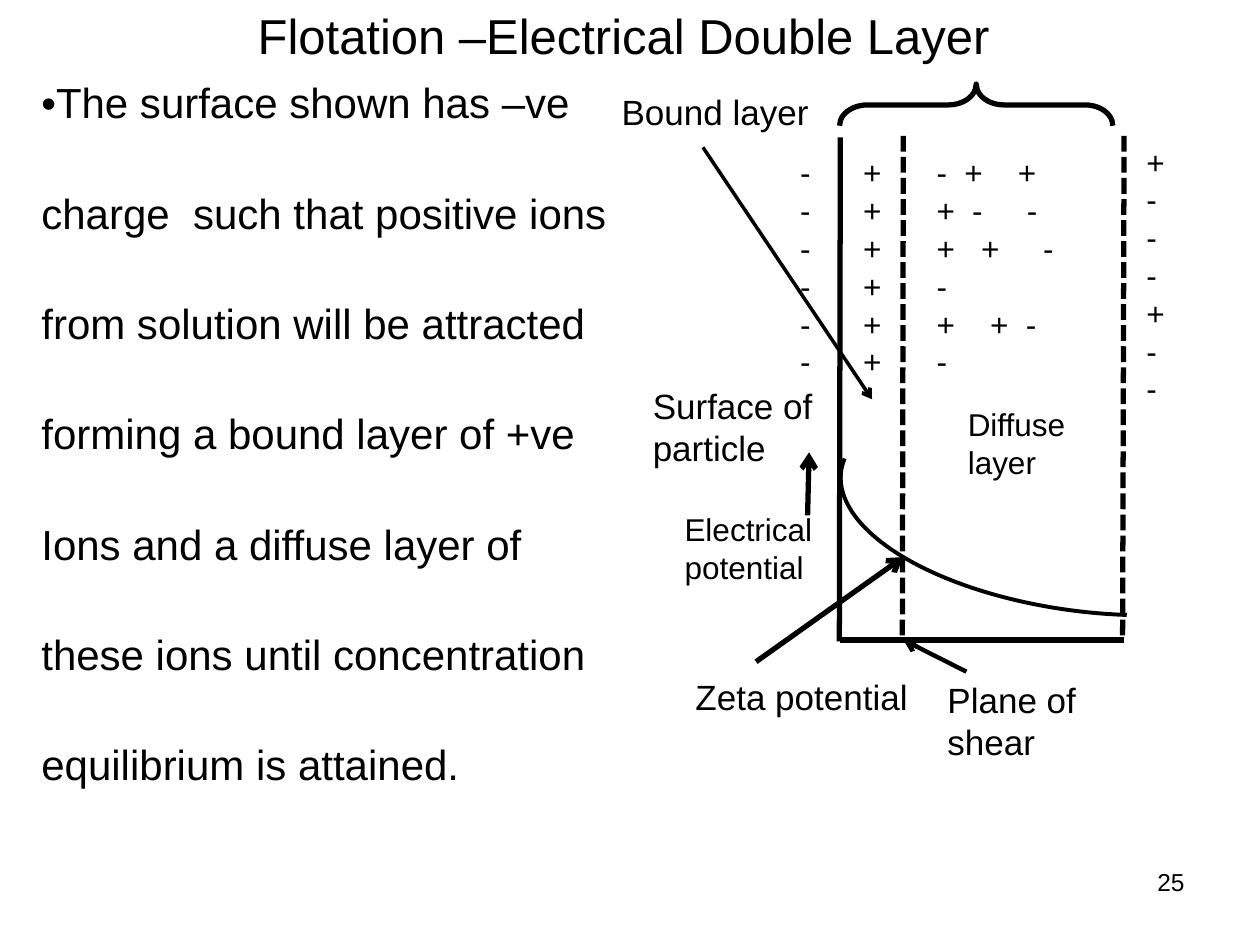
from lxml.etree import SubElement as Sub
from pptx import Presentation
from pptx.dml.color import RGBColor as RGB
from pptx.enum.dml import MSO_LINE as Dash
from pptx.enum.shapes import MSO_CONNECTOR as Link, MSO_SHAPE as Shape
from pptx.enum.text import MSO_ANCHOR as Anchor, PP_ALIGN as Align
from pptx.oxml.ns import qn
from pptx.util import Cm, Pt

HUES = {"ink": "000000"}
INK = RGB.from_string(HUES["ink"])
FONT = {"name": "Arial", "bold": False}

deck = Presentation()
deck.slide_width, deck.slide_height = Cm(25.4), Cm(19.05)
slide = deck.slides.add_slide(deck.slide_layouts[6])
shapes = slide.shapes


def write(frame, lines, size, align=Align.LEFT):
    """Fill a text frame with one paragraph per line and return them."""
    frame.word_wrap = True
    for i, line in enumerate(lines):
        par = frame.add_paragraph() if i else frame.paragraphs[0]
        par.text, par.alignment = line, align
        for key, val in {**FONT, "size": Pt(size)}.items():
            setattr(par.font, key, val)
        par.font.color.rgb = INK
    return frame.paragraphs


def ink(item, width):
    item.line.color.rgb, item.line.width = INK, Pt(width)


# Explanation on the left
table = shapes.add_table(2, 1, Cm(0.43), Cm(1.5), Cm(23.5), Cm(17.17)).table
table.first_row = table.horz_banding = False
for row, high in zip(table.rows, (15.9, 1.27)):
    row.height = Cm(high)
    row.cells[0].fill.background()
pars = write(table.cell(0, 0).text_frame, (
    "The surface shown has –ve", "charge  such that positive ions",
    "from solution will be attracted", "forming a bound layer of +ve",
    "Ions and a diffuse layer of", "these ions until concentration",
    "equilibrium is attained."), 24)
for i, par in enumerate(pars):
    par.space_before = Pt(36.3 if i else 0)
    props = par._p.get_or_add_pPr()
    props.set("marL", "0")
    props.set("indent", str(Cm(0.15)))
    if i == 0:
        Sub(props, qn("a:buFont"), typeface=FONT["name"])
        Sub(props, qn("a:buChar"), char="•")

# Title, labels and columns of charges: left, top, width, height, size, lines
texts = {
    "title": (1.14, 0.35, 22.86, 0.71, 28, ["Flotation –Electrical Double Layer"]),
    "page": (18.21, 17.35, 5.92, 1.32, 14, ["25"]),
    "zeta": (13.77, 13.49, 5.28, 1.12, 20, ["Zeta potential"]),
    "surface": (12.91, 7.62, 4.01, 1.96, 20, ["Surface of particle"]),
    "diffuse": (19.26, 8.05, 2.97, 1.8, 18, ["Diffuse layer"]),
    "bound": (12.28, 1.7, 4.65, 1.12, 20, ["Bound layer"]),
    "electric": (13.55, 10.16, 3.18, 1.8, 18, ["Electrical potential"]),
    "shear": (18.85, 13.55, 3.81, 1.96, 20, ["Plane of shear"]),
    "minus": (15.88, 2.97, 0.84, 4.88, 18, "-" * 6),
    "plus": (17.15, 2.97, 0.84, 4.88, 18, "+" * 6),
    "mixed": (18.63, 2.97, 3.18, 4.88, 18,
              ["-\t+\t+", "+\t-\t-", "+\t+\t-", "-", "+\t+\t-", "-"]),
    "outer": (22.86, 2.75, 1.07, 5.64, 18, "+---+--"),
}
aligns = {"title": Align.CENTER, "page": Align.RIGHT}
boxes = {}
for name, (*place, size, lines) in texts.items():
    frame = boxes[name] = shapes.add_textbox(*map(Cm, place)).text_frame
    write(frame, lines, size, aligns.get(name, Align.LEFT))
boxes["title"].vertical_anchor = Anchor.MIDDLE

# Tab stops that scatter the charges of the diffuse layer
stops = {0: (0.56, 1.64), 1: (0.72, 1.82), 2: (0.9, 2.15), 4: (1.08, 1.8)}
for i, tabs in stops.items():
    props = boxes["mixed"].paragraphs[i]._p.get_or_add_pPr()
    group = Sub(props, qn("a:tabLst"))
    for tab in tabs:
        Sub(group, qn("a:tab"), pos=str(Cm(tab)), algn="l")

# Axes, layer limits and pointers: start, end, width, style
lines = (
    (16.94, 2.77, 16.92, 12.93, 3, ""),
    (16.94, 12.9, 22.66, 12.9, 3, ""),
    (18.21, 2.74, 18.19, 12.9, 3, "dash"),
    (22.66, 2.74, 22.63, 12.9, 3, "dash"),
    (15.24, 13.34, 18.21, 11.23, 3, "arrow"),
    (14.17, 2.97, 17.58, 8.05, 2, "arrow"),
    (16.28, 10.39, 16.31, 9.12, 3, "arrow"),
    (19.48, 13.54, 18.21, 12.9, 2.5, "arrow"),
)
for *ends, width, style in lines:
    line = shapes.add_connector(Link.STRAIGHT, *map(Cm, ends))
    ink(line, width)
    if style == "dash":
        line.line.dash_style = Dash.SQUARE_DOT
    if style == "arrow":
        Sub(line.line._get_or_add_ln(), qn("a:tailEnd"), type="arrow")
    Sub(line._element.spPr, qn("a:effectLst"))

# Potential curve and brace: kind, place, rotation, adjustments, width
curves = (
    (Shape.ARC, (16.92, 7.87, 10.24, 4.47), 186.6, (148.2, 1.9), 2.25),
    (Shape.RIGHT_BRACE, (19.26, -0.64, 0.84, 5.51), 270, (0.67, 0.5), 3),
)
for kind, place, turn, bends, width in curves:
    curve = shapes.add_shape(kind, *map(Cm, place))
    curve.rotation = turn
    curve.shadow.inherit = False
    curve.fill.background()
    ink(curve, width)
    for i, bend in enumerate(bends):
        curve.adjustments[i] = bend

deck.save("out.pptx")
